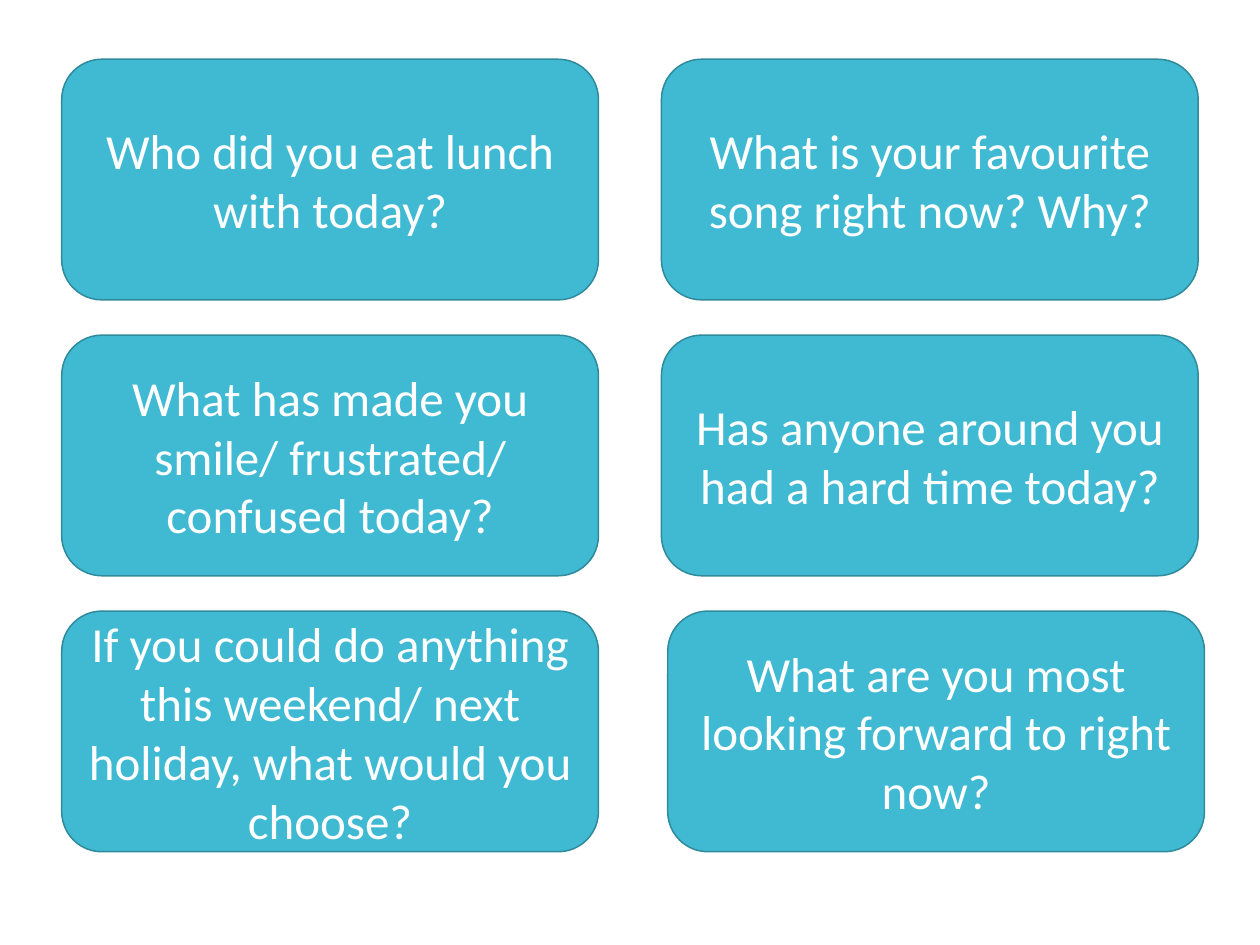
import pptx
import pptx.util
import pptx.dml.color
import pptx.enum.shapes
import pptx.enum.text

QUESTION_ROWS = [
    ("Who did you eat lunch with today?",
     "What is your favourite song right now? Why?"),
    ("What has made you smile/ frustrated/ confused today?",
     "Has anyone around you had a hard time today?"),
    ("If you could do anything this weekend/ next holiday, what would you choose?",
     "What are you most looking forward to right now?"),
]
CARD_NUDGES = {(2, 1): 0.05}

TEAL = pptx.dml.color.RGBColor(0x40, 0xBA, 0xD2)
DARK_TEAL = pptx.dml.color.RGBColor(0x2F, 0x8A, 0x9B)
WHITE = pptx.dml.color.RGBColor(0xFF, 0xFF, 0xFF)

SLIDE_WIDTH, SLIDE_HEIGHT = 10, 7.5
GRID_LEFT, GRID_TOP = 0.49, 0.47
CARD_WIDTH, CARD_HEIGHT = 4.26, 1.91
COLUMN_STEP, ROW_STEP = 4.76, 2.19


def write_text(shape, text, size=28, font="Calibri", color=WHITE):
    frame = shape.text_frame
    frame.word_wrap = True
    frame.vertical_anchor = pptx.enum.text.MSO_ANCHOR.MIDDLE
    paragraph = frame.paragraphs[0]
    paragraph.alignment = pptx.enum.text.PP_ALIGN.CENTER
    run = paragraph.add_run()
    run.text = text
    run.font.size = pptx.util.Pt(size)
    run.font.name = font
    run.font.color.rgb = color


def add_card(slide, left, top, question):
    card = slide.shapes.add_shape(
        pptx.enum.shapes.MSO_SHAPE.ROUNDED_RECTANGLE,
        *map(pptx.util.Inches, (left, top, CARD_WIDTH, CARD_HEIGHT)))
    card.shadow.inherit = False
    card.fill.solid()
    card.fill.fore_color.rgb = TEAL
    card.line.color.rgb = DARK_TEAL
    card.line.width = pptx.util.Pt(0.85)
    write_text(card, question)


def main():
    presentation = pptx.Presentation()
    presentation.slide_width = pptx.util.Inches(SLIDE_WIDTH)
    presentation.slide_height = pptx.util.Inches(SLIDE_HEIGHT)
    slide = presentation.slides.add_slide(presentation.slide_layouts[6])
    for row, questions in enumerate(QUESTION_ROWS):
        for column, question in enumerate(questions):
            left = GRID_LEFT + column * COLUMN_STEP + CARD_NUDGES.get((row, column), 0)
            add_card(slide, left, GRID_TOP + row * ROW_STEP, question)
    presentation.save("out.pptx")


if __name__ == "__main__":
    main()
